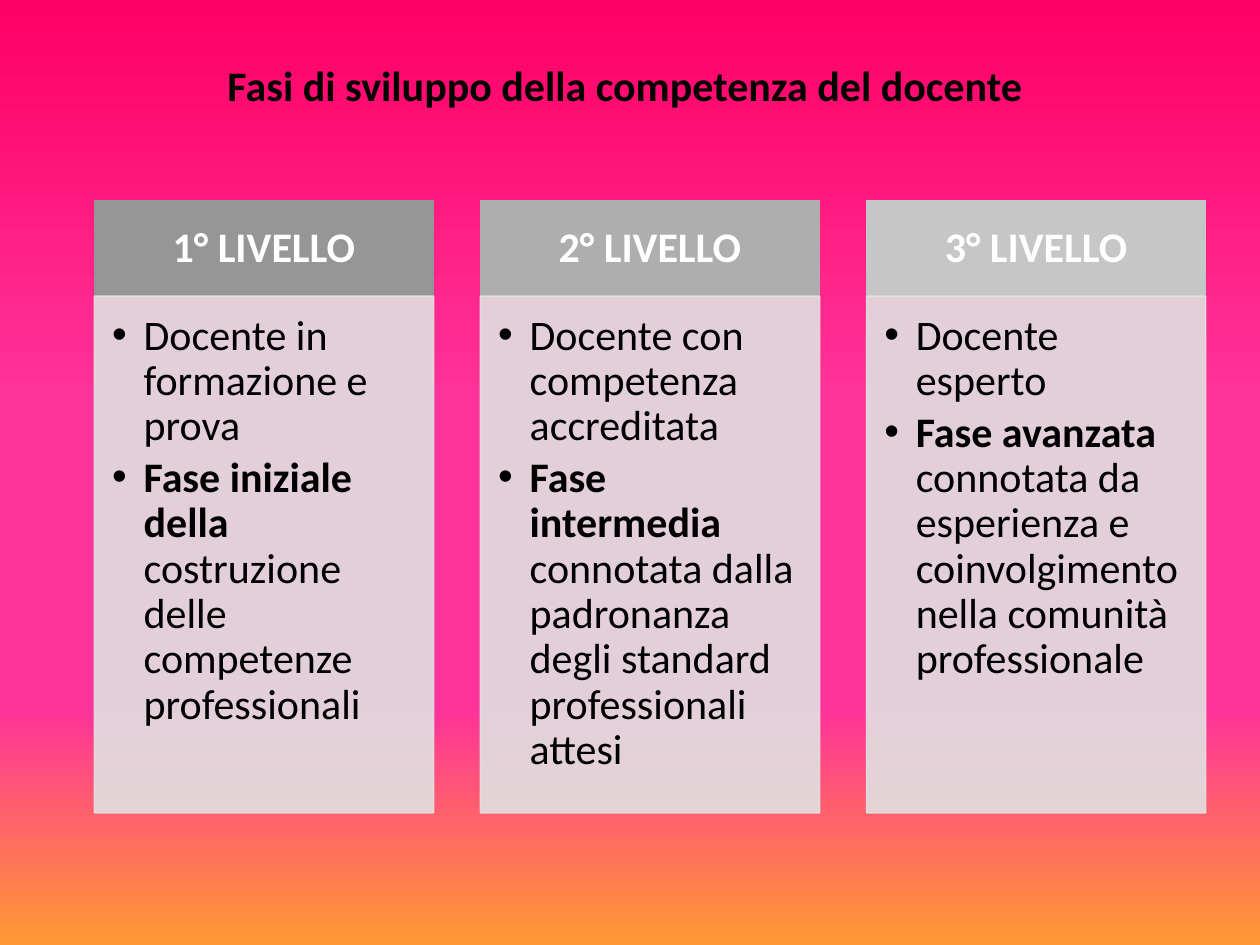
from pptx import Presentation
from pptx.dml.color import RGBColor
from pptx.enum.shapes import MSO_SHAPE
from pptx.enum.text import MSO_ANCHOR, PP_ALIGN
from pptx.oxml.ns import qn
from pptx.util import Pt
from lxml.etree import SubElement

BLACK = RGBColor(0x00, 0x00, 0x00)
WHITE = RGBColor(0xFF, 0xFF, 0xFF)
PANEL_GREY = RGBColor(0xE1, 0xE1, 0xE1)
DARK_GREY = RGBColor(0x96, 0x96, 0x96)
MID_GREY = RGBColor(0xAE, 0xAE, 0xAE)
LIGHT_GREY = RGBColor(0xC6, 0xC6, 0xC6)
RED_PINK = RGBColor(0xFF, 0x00, 0x66)
PINK = RGBColor(0xFF, 0x33, 0x99)
ORANGE = RGBColor(0xFF, 0x99, 0x33)

BACKGROUND_STOPS = [(0, RED_PINK), (42, PINK), (75, PINK), (100, ORANGE)]

FIRST_LEFT, COLUMN_STEP, COLUMN_WIDTH = 54, 220.6, 193.7
HEADER_TOP, HEADER_HEIGHT, PANEL_HEIGHT = 115, 54.3, 295.2

LEVELS = [
    ("1° LIVELLO", DARK_GREY, "Docente in formazione e prova", "Fase iniziale della ",
     "costruzione delle competenze professionali"),
    ("2° LIVELLO", MID_GREY, "Docente con competenza accreditata", "Fase intermedia ",
     "connotata dalla padronanza degli standard professionali attesi"),
    ("3° LIVELLO", LIGHT_GREY, "Docente esperto", "Fase avanzata ",
     "connotata da esperienza e coinvolgimento nella comunità professionale"),
]


def paint_background(slide):
    fill = slide.background.fill
    fill.gradient()
    fill.gradient_angle = 270
    stop_list = slide.element.find(".//" + qn("a:gsLst"))
    stop_list.clear()
    for position, color in BACKGROUND_STOPS:
        stop = SubElement(stop_list, qn("a:gs"), pos=str(position * 1000))
        SubElement(stop, qn("a:srgbClr"), val=str(color))


def add_bullet(paragraph):
    paragraph.level = 1
    properties = paragraph._p.get_or_add_pPr()
    properties.set("marL", str(Pt(18)))
    properties.set("indent", str(-Pt(18)))
    SubElement(properties, qn("a:buFont"), typeface="Arial")
    SubElement(properties, qn("a:buChar"), char="•")


def write_text(shape, paragraphs, color=BLACK, align=PP_ALIGN.LEFT,
               anchor=MSO_ANCHOR.MIDDLE, insets=(7.2, 3.6, 7.2, 3.6),
               bullets=False, space_after=0):
    frame = shape.text_frame
    frame.word_wrap = True
    frame.vertical_anchor = anchor
    (frame.margin_left, frame.margin_top,
     frame.margin_right, frame.margin_bottom) = map(Pt, insets)
    for index, runs in enumerate(paragraphs):
        paragraph = frame.add_paragraph() if index else frame.paragraphs[0]
        paragraph.alignment = align
        paragraph.line_spacing = 0.9
        paragraph.space_after = Pt(space_after)
        if bullets:
            add_bullet(paragraph)
        for text, bold in runs:
            run = paragraph.add_run()
            run.text = text
            run.font.name = "Calibri"
            run.font.size = Pt(24)
            run.font.bold = bold
            run.font.color.rgb = color


def add_rectangle(slide, left, top, width, height, color, opacity=100):
    shape = slide.shapes.add_shape(
        MSO_SHAPE.RECTANGLE, Pt(left), Pt(top), Pt(width), Pt(height))
    shape.shadow.inherit = False
    shape.fill.solid()
    shape.fill.fore_color.rgb = color
    shape.line.color.rgb = color
    shape.line.width = Pt(1)
    if opacity < 100:
        for color_element in shape._element.spPr.iter(qn("a:srgbClr")):
            SubElement(color_element, qn("a:alpha"), val=str(opacity * 1000))
    return shape


def add_title(slide, text):
    title = slide.shapes.add_textbox(Pt(31), Pt(28.8), Pt(652.3), Pt(43.2))
    write_text(title, [[(text, True)]], align=PP_ALIGN.CENTER)


def add_level(slide, left, heading, color, role, phase, description):
    header = add_rectangle(slide, left, HEADER_TOP, COLUMN_WIDTH, HEADER_HEIGHT, color)
    write_text(header, [[(heading, True)]], color=WHITE, align=PP_ALIGN.CENTER,
               insets=(13.7, 7.9, 13.7, 7.9))
    panel = add_rectangle(slide, left, HEADER_TOP + HEADER_HEIGHT, COLUMN_WIDTH,
                          PANEL_HEIGHT, PANEL_GREY, opacity=90)
    write_text(panel, [[(role, False)], [(phase, True), (description, False)]],
               anchor=MSO_ANCHOR.TOP, insets=(10.1, 10.1, 13.7, 15.1),
               bullets=True, space_after=3.5)


def main():
    presentation = Presentation()
    presentation.slide_width = Pt(720)
    presentation.slide_height = Pt(540)
    slide = presentation.slides.add_slide(presentation.slide_layouts[6])
    paint_background(slide)
    add_title(slide, "Fasi di sviluppo della competenza del docente")
    for index, level in enumerate(LEVELS):
        add_level(slide, FIRST_LEFT + index * COLUMN_STEP, *level)
    presentation.save("out.pptx")


if __name__ == "__main__":
    main()
